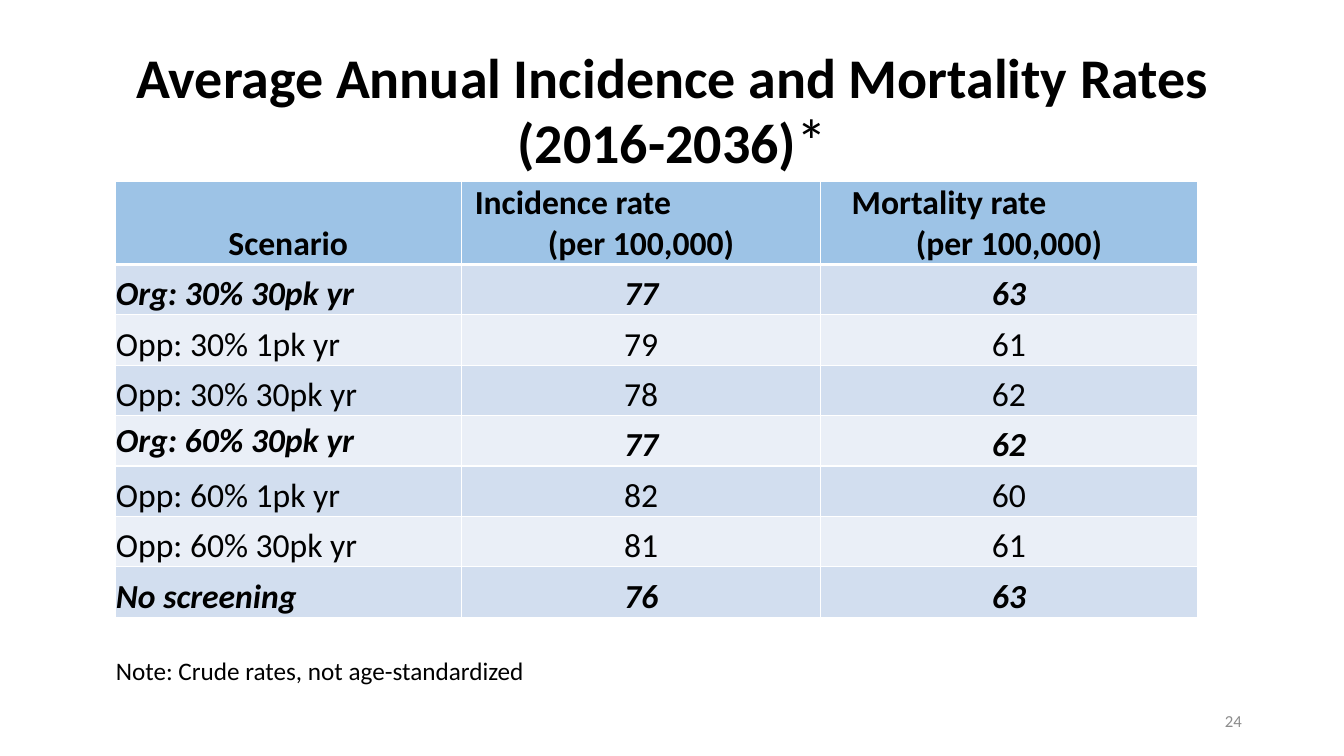
import dataclasses

import lxml.etree
import pptx
import pptx.dml.color
import pptx.enum.text
import pptx.oxml.ns
import pptx.util

ALIGN = pptx.enum.text.PP_ALIGN
ANCHOR = pptx.enum.text.MSO_ANCHOR
SLIDE_WIDTH = pptx.util.Inches(13.33)
SLIDE_HEIGHT = pptx.util.Inches(7.5)
FONT = "Calibri"
BLACK, GRAY, WHITE = "000000", "8C8C8C", "FFFFFF"
HEADER_FILL = "9DC3E6"
BAND_FILLS = ("D2DEEF", "EAEFF7")


@dataclasses.dataclass
class Run:
    text: str
    size: float
    color: str = BLACK
    bold: bool = False
    italic: bool = False


@dataclasses.dataclass
class Line:
    """One paragraph; indent is in inches."""
    runs: list[Run]
    align: ALIGN = ALIGN.LEFT
    indent: float = 0
    spacing: float = 1


@dataclasses.dataclass
class Label:
    """A text box placed in percent of the slide's size."""
    left: float
    top: float
    width: float
    height: float
    line: Line
    anchor: ANCHOR = ANCHOR.MIDDLE


@dataclasses.dataclass
class Scenario:
    name: str
    incidence: int
    mortality: int
    emphasis: bool = False
    name_anchor: ANCHOR = ANCHOR.BOTTOM


LABELS = [
    Label(6.9, 5.33, 86.25, 19.33, Line([
        Run("Average Annual Incidence and Mortality Rates (2016-2036)", 40, bold=True),
        Run("*", 44),
    ], ALIGN.CENTER, spacing=0.9)),
    Label(70.65, 92.67, 22.5, 5.33, Line([Run("24", 12, GRAY)], ALIGN.RIGHT)),
    Label(7.88, 86, 48.6, 5.33,
          Line([Run("Note: Crude rates, not age-standardized", 18)]), ANCHOR.TOP),
]

# Table grid, in percent of the slide's size
TABLE_LEFT, TABLE_TOP = 8.55, 24
COLUMN_WIDTHS = (25.8, 26.7, 28.05)
HEADER_HEIGHT, ROW_HEIGHT = 10.8, 6.67

SCENARIOS = [
    Scenario("Org: 30% 30pk yr", 77, 63, True),
    Scenario("Opp: 30% 1pk yr", 79, 61),
    Scenario("Opp: 30% 30pk yr", 78, 62),
    Scenario("Org: 60% 30pk yr", 77, 62, True, ANCHOR.MIDDLE),
    Scenario("Opp: 60% 1pk yr", 82, 60),
    Scenario("Opp: 60% 30pk yr", 81, 61),
    Scenario("No screening", 76, 63, True),
]


def across(percent: float) -> int:
    return round(SLIDE_WIDTH * percent / 100)


def down(percent: float) -> int:
    return round(SLIDE_HEIGHT * percent / 100)


def rgb(color: str) -> pptx.dml.color.RGBColor:
    return pptx.dml.color.RGBColor.from_string(color)


def write_lines(text_frame, lines: list[Line]) -> None:
    for index, line in enumerate(lines):
        paragraph = text_frame.add_paragraph() if index else text_frame.paragraphs[0]
        paragraph.alignment = line.align
        paragraph.line_spacing = line.spacing
        if line.indent:
            properties = paragraph._p.get_or_add_pPr()
            properties.set("marL", str(pptx.util.Inches(line.indent)))
        for item in line.runs:
            run = paragraph.add_run()
            run.text = item.text
            run.font.name = FONT
            run.font.size = pptx.util.Pt(item.size)
            run.font.bold = item.bold
            run.font.italic = item.italic
            run.font.color.rgb = rgb(item.color)


def add_label(slide, label: Label) -> None:
    shape = slide.shapes.add_textbox(across(label.left), down(label.top),
                                     across(label.width), down(label.height))
    shape.text_frame.word_wrap = True
    shape.text_frame.vertical_anchor = label.anchor
    write_lines(shape.text_frame, [label.line])


def add_border(cell, side: str, width: float) -> None:
    qualified = pptx.oxml.ns.qn
    border = lxml.etree.SubElement(cell._tc.get_or_add_tcPr(), qualified(f"a:ln{side}"),
                                   w=str(pptx.util.Pt(width)))
    fill = lxml.etree.SubElement(border, qualified("a:solidFill"))
    lxml.etree.SubElement(fill, qualified("a:srgbClr"), val=WHITE)


def fill_cell(cell, lines: list[Line], fill: str, anchor: ANCHOR,
              top_border: float, bottom_border: float) -> None:
    cell.margin_left = cell.margin_right = cell.margin_top = pptx.util.Inches(0.01)
    cell.margin_bottom = 0
    cell.vertical_anchor = anchor
    for side, width in (("L", 1), ("R", 1), ("T", top_border), ("B", bottom_border)):
        add_border(cell, side, width)
    cell.fill.solid()
    cell.fill.fore_color.rgb = rgb(fill)
    write_lines(cell.text_frame, lines)


def header_lines() -> list[list[Line]]:
    def heading(text: str, align: ALIGN = ALIGN.CENTER, indent: float = 0) -> Line:
        return Line([Run(text, 24, bold=True)], align, indent)

    unit = heading("(per 100,000)")
    return [
        [heading("Scenario")],
        [heading("Incidence rate", ALIGN.LEFT, 0.12), unit],
        [heading("Mortality rate", ALIGN.LEFT, 0.3), unit],
    ]


def add_rates_table(slide) -> None:
    heights = [HEADER_HEIGHT] + [ROW_HEIGHT] * len(SCENARIOS)
    table = slide.shapes.add_table(
        len(heights), len(COLUMN_WIDTHS), across(TABLE_LEFT), down(TABLE_TOP),
        across(sum(COLUMN_WIDTHS)), down(sum(heights))).table
    for column, width in zip(table.columns, COLUMN_WIDTHS):
        column.width = across(width)
    for row, height in zip(table.rows, heights):
        row.height = down(height)

    # Header row
    for column, lines in enumerate(header_lines()):
        fill_cell(table.cell(0, column), lines, HEADER_FILL, ANCHOR.BOTTOM, 1, 3)

    # Scenario rows
    for row, scenario in enumerate(SCENARIOS, start=1):
        values = (scenario.name, scenario.incidence, scenario.mortality)
        for column, value in enumerate(values):
            run = Run(str(value), 24, bold=scenario.emphasis, italic=scenario.emphasis)
            line = Line([run], ALIGN.CENTER if column else ALIGN.LEFT)
            anchor = ANCHOR.BOTTOM if column else scenario.name_anchor
            fill_cell(table.cell(row, column), [line], BAND_FILLS[(row - 1) % 2],
                      anchor, 3 if row == 1 else 1, 1)


def main() -> None:
    presentation = pptx.Presentation()
    presentation.slide_width = SLIDE_WIDTH
    presentation.slide_height = SLIDE_HEIGHT
    slide = presentation.slides.add_slide(presentation.slide_layouts[6])
    add_rates_table(slide)
    for label in LABELS:
        add_label(slide, label)
    presentation.save("out.pptx")


if __name__ == "__main__":
    main()
